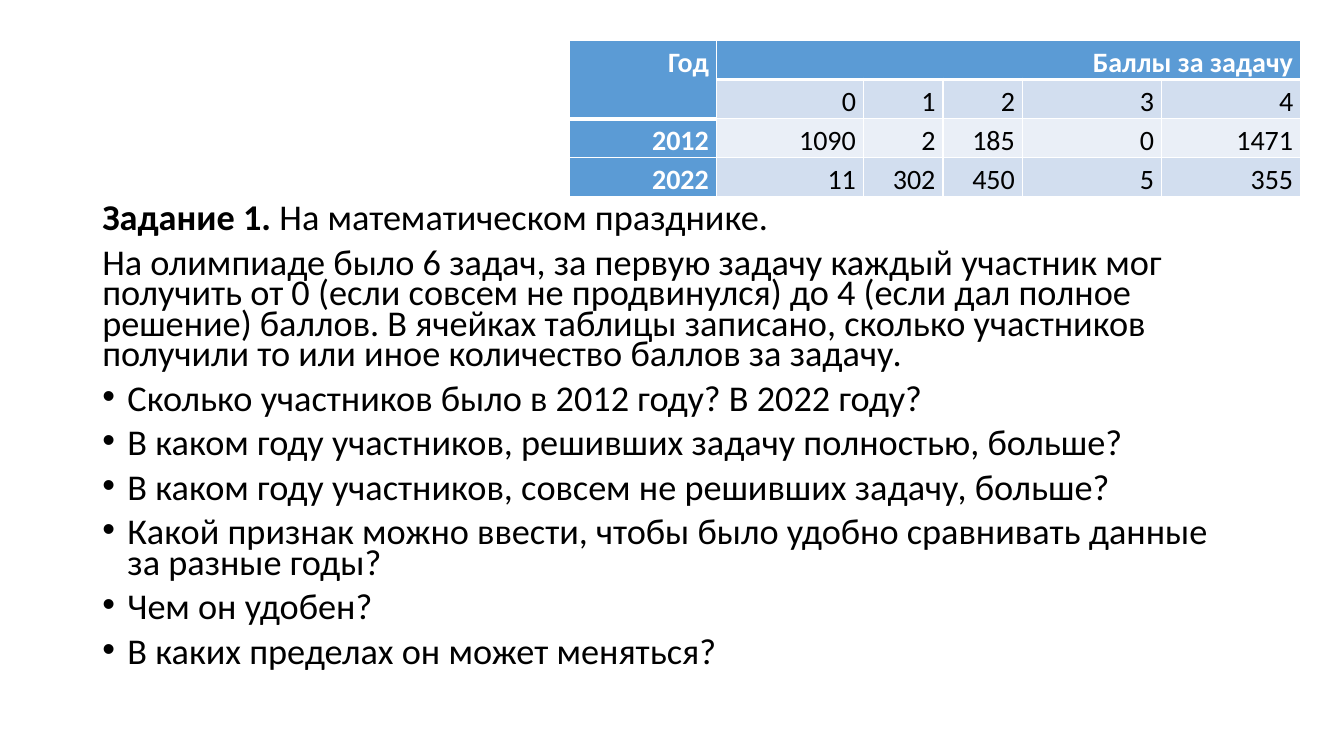
import pptx
import pptx.dml.color
import pptx.enum.text
import pptx.oxml.ns
import pptx.util
from lxml import etree

Pt = pptx.util.Pt
COLORS = {"text": "000000", "white": "FFFFFF", "header": "5B9BD5",
          "band_dark": "D2DEEF", "band_light": "EAEFF7"}

SCORES = [
    ["Год", "Баллы за задачу", "", "", "", ""],
    ["", "0", "1", "2", "3", "4"],
    ["2012", "1090", "2", "185", "0", "1471"],
    ["2022", "11", "302", "450", "5", "355"],
]
COLUMN_WIDTHS = [105, 105, 56.8, 56.8, 99.4, 99.4]
ROW_HEIGHT = 28

TASK_TITLE = ("Задание 1.", " На математическом празднике.")
TASK_TEXT = (
    "На олимпиаде было 6 задач, за первую задачу каждый участник мог получить "
    "от 0 (если совсем не продвинулся) до 4 (если дал полное решение) баллов. "
    "В ячейках таблицы записано, сколько участников получили то или иное "
    "количество баллов за задачу."
)
QUESTIONS = [
    "Сколько участников было в 2012 году? В 2022 году?",
    "В каком году участников, решивших задачу полностью, больше?",
    "В каком году участников, совсем не решивших задачу, больше?",
    "Какой признак можно ввести, чтобы было удобно сравнивать данные за разные годы?",
    "Чем он удобен?",
    "В каких пределах он может меняться?",
]


def rgb(name):
    return pptx.dml.color.RGBColor.from_string(COLORS[name])


def add_element(parent, tag, **attributes):
    return etree.SubElement(parent, pptx.oxml.ns.qn(tag), **attributes)


class SlideBuilder:
    font = "Calibri"
    body_size = 25.9
    table_size = 20

    def __init__(self, page):
        self.page = page

    def format_span(self, span, size, color="text", bold=False):
        span.font.name = self.font
        span.font.size = Pt(size)
        span.font.bold = bold
        span.font.color.rgb = rgb(color)

    def text_box(self, left, top, width, height):
        box = self.page.shapes.add_textbox(Pt(left), Pt(top), Pt(width), Pt(height))
        box.text_frame.word_wrap = True
        return box.text_frame

    def paragraph(self, para, parts, bold_first=False, bullet=False):
        para.text = parts[0]
        for part in parts[1:]:
            para.add_run().text = part
        for index, span in enumerate(para.runs):
            self.format_span(span, self.body_size, bold=bold_first and index == 0)
        para.line_spacing = 0.7
        para.space_before = Pt(10)
        if bullet:
            properties = para._p.get_or_add_pPr()
            properties.set("marL", str(Pt(18)))
            properties.set("indent", str(Pt(-18)))
            add_element(properties, "a:buFont", typeface="Arial")
            add_element(properties, "a:buChar", char="•")

    def cell_borders(self, cell, top, bottom):
        properties = cell._tc.get_or_add_tcPr()
        for side, width in (("L", 1), ("R", 1), ("T", top), ("B", bottom)):
            line = add_element(properties, f"a:ln{side}", w=str(Pt(width)))
            fill = add_element(line, "a:solidFill")
            add_element(fill, "a:srgbClr", val=COLORS["white"])

    def table_cell(self, cell, text, fill, header, top=1, bottom=1):
        cell.margin_left = cell.margin_right = Pt(5.4)
        cell.margin_top = cell.margin_bottom = 0
        self.cell_borders(cell, top, bottom)
        cell.fill.solid()
        cell.fill.fore_color.rgb = rgb(fill)
        cell.text_frame.text = text
        para = cell.text_frame.paragraphs[0]
        para.alignment = pptx.enum.text.PP_ALIGN.RIGHT
        para.line_spacing = 1.15
        para.font.size = Pt(self.table_size)
        for span in para.runs:
            self.format_span(span, self.table_size, "white" if header else "text", header)

    def score_table(self, left, top, rows, widths, row_height):
        """Table whose first column and first row are headers."""
        frame = self.page.shapes.add_table(
            len(rows), len(widths), Pt(left), Pt(top),
            Pt(sum(widths)), Pt(row_height * len(rows)))
        table = frame.table
        table.first_row = table.horz_banding = False
        for column, width in zip(table.columns, widths):
            column.width = Pt(width)
        for r, values in enumerate(rows):
            table.rows[r].height = Pt(row_height)
            for c, value in enumerate(values):
                header = r == 0 or c == 0
                band = "band_dark" if r % 2 else "band_light"
                header_end = 1 if c == 0 else 0
                self.table_cell(
                    table.cell(r, c), value, "header" if header else band, header,
                    top=3 if r == header_end + 1 else 1,
                    bottom=3 if r in (0, header_end) else 1)
        table.cell(0, 0).merge(table.cell(1, 0))
        table.cell(0, 1).merge(table.cell(0, len(widths) - 1))


def main():
    deck = pptx.Presentation()
    deck.slide_width, deck.slide_height = Pt(960), Pt(540)
    builder = SlideBuilder(deck.slides.add_slide(deck.slide_layouts[6]))

    task = builder.text_box(66, 144, 828, 343)
    builder.paragraph(task.paragraphs[0], TASK_TITLE, bold_first=True)
    builder.paragraph(task.add_paragraph(), [TASK_TEXT])
    for question in QUESTIONS:
        builder.paragraph(task.add_paragraph(), [question], bullet=True)

    builder.score_table(406.8, 28.8, SCORES, COLUMN_WIDTHS, ROW_HEIGHT)
    deck.save("out.pptx")


if __name__ == "__main__":
    main()
